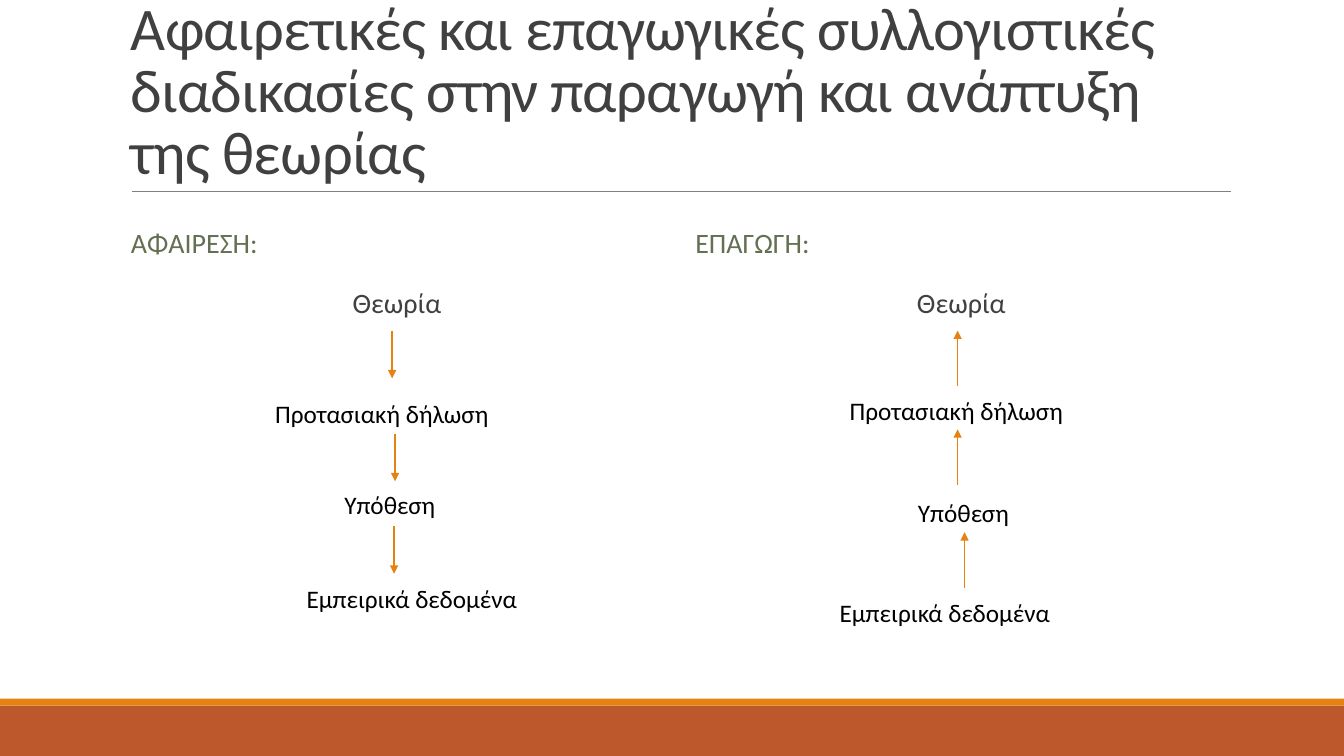
from lxml.etree import SubElement
from pptx import Presentation
from pptx.dml.color import RGBColor
from pptx.enum.shapes import MSO_CONNECTOR as Connector, MSO_SHAPE as Shape
from pptx.enum.text import MSO_ANCHOR as Anchor, PP_ALIGN as Align
from pptx.oxml.ns import qn
from pptx.util import Pt

COLORS = {"brick": "BD582C", "orange": "E48312", "rule": "808080",
          "dark": "404040", "green": "637052", "black": "000000"}
TITLE = ("Αφαιρετικές και επαγωγικές συλλογιστικές διαδικασίες "
         "στην παραγωγή και ανάπτυξη της θεωρίας")
THEORY = "Θεωρία "
STEPS = [("Προτασιακή δήλωση", Align.LEFT), ("Υπόθεση ", Align.CENTER),
         ("Εμπειρικά δεδομένα", Align.CENTER)]
COLUMNS = [
    {"heading": "Αφαίρεση:", "left": 86.4, "arrow_length": 34,
     "steps": [(189.4, 280.8), (190.1, 346.3), (203.8, 413.3)],
     "arrows": [(280.1, 236.2), (282.2, 309.8), (281.5, 375.8)]},
    {"heading": "Επαγωγή:", "left": 489.6, "arrow_length": -39.6,
     "steps": [(599.8, 278.6), (599.8, 351.4), (584.6, 423.4)],
     "arrows": [(684, 275.8), (684, 346.3), (689, 419.8)]},
]
BANDS = [(504, 36, "brick"), (499, 5, "orange")]
PAGE_WIDTH, PAGE_HEIGHT = 960, 540
COLUMN_WIDTH = 388.8
STEP_SIZE = (180.7, 28.8)
BODY_SPACING = {"line_spacing": 0.9, "space_before": Pt(12), "space_after": Pt(2)}


def color(name):
    return RGBColor.from_string(COLORS[name])


def apply(target, formats):
    for name, value in formats.items():
        setattr(target, name, value)


def add_text(page, bounds, text, size, ink, frame_format=None, para_format=None):
    box = page.shapes.add_textbox(*map(Pt, bounds))
    frame = box.text_frame
    apply(frame, {"word_wrap": True, **(frame_format or {})})
    para = frame.paragraphs[0]
    apply(para, para_format or {})
    span = para.add_run()
    span.text = text
    apply(span.font, {"size": Pt(size), "name": "Calibri"})
    span.font.color.rgb = color(ink)
    return para, span


def add_line(page, start, end, ink, width, arrow=False):
    line = page.shapes.add_connector(Connector.STRAIGHT, *map(Pt, (*start, *end)))
    line.line.color.rgb = color(ink)
    line.line.width = Pt(width)
    if arrow:
        SubElement(line.line._get_or_add_ln(), qn("a:tailEnd"), type="triangle")
    SubElement(line._element.spPr, qn("a:effectLst"))


def add_blank_bullet(para):
    props = para._p.get_or_add_pPr()
    props.set("marL", str(Pt(7.2)))
    props.set("indent", str(-Pt(7.2)))
    tint = SubElement(props, qn("a:buClr"))
    SubElement(tint, qn("a:srgbClr"), val=COLORS["orange"])
    SubElement(props, qn("a:buChar"), char=" ")


def add_column(page, column):
    left = column["left"]
    _, heading = add_text(page, (left, 145.4, COLUMN_WIDTH, 58.3), column["heading"], 20,
                          "green", {"vertical_anchor": Anchor.MIDDLE}, BODY_SPACING)
    heading._r.get_or_add_rPr().set("cap", "all")
    theory, _ = add_text(page, (left, 203, COLUMN_WIDTH, 265.7), THEORY, 20, "dark",
                         {"margin_left": 0, "margin_right": 0},
                         {"alignment": Align.CENTER, **BODY_SPACING})
    add_blank_bullet(theory)
    for (text, align), corner, (x, y) in zip(STEPS, column["steps"], column["arrows"]):
        add_line(page, (x, y), (x, y + column["arrow_length"]), "orange", 1, arrow=True)
        add_text(page, (*corner, *STEP_SIZE), text, 18, "black",
                 para_format={"alignment": align})


def main():
    """Build the slide that compares deduction with induction."""
    deck = Presentation()
    apply(deck, {"slide_width": Pt(PAGE_WIDTH), "slide_height": Pt(PAGE_HEIGHT)})
    page = deck.slides.add_slide(deck.slide_layouts[6])
    for top, height, fill in BANDS:
        band = page.shapes.add_shape(Shape.RECTANGLE, 0, Pt(top), Pt(PAGE_WIDTH), Pt(height))
        band.shadow.inherit = False
        band.fill.solid()
        band.fill.fore_color.rgb = color(fill)
        band.line.fill.background()
    add_line(page, (94.3, 136.8), (879.1, 136.8), "rule", 0.5)
    _, title = add_text(page, (86.4, 22.3, 792, 114.5), TITLE, 43.2, "dark",
                        {"vertical_anchor": Anchor.BOTTOM}, {"line_spacing": 0.85})
    title._r.get_or_add_rPr().set("spc", "-50")
    for column in COLUMNS:
        add_column(page, column)
    deck.save("out.pptx")


if __name__ == "__main__":
    main()
